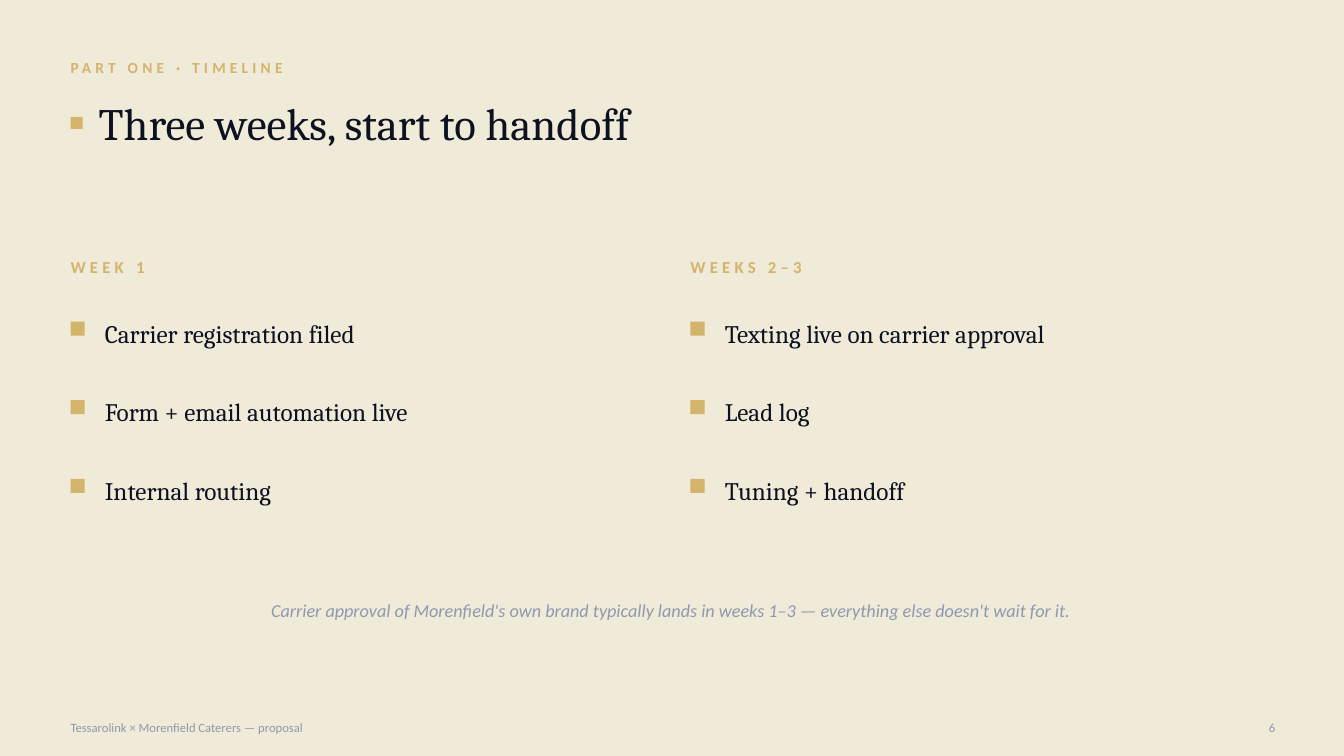
from pptx import Presentation
from pptx.dml.color import RGBColor
from pptx.enum.shapes import MSO_SHAPE
from pptx.enum.text import MSO_ANCHOR, PP_ALIGN
from pptx.util import Pt

RECT = MSO_SHAPE.RECTANGLE
MIDDLE = MSO_ANCHOR.MIDDLE
LEFT, CENTER, RIGHT = PP_ALIGN.LEFT, PP_ALIGN.CENTER, PP_ALIGN.RIGHT

CREAM = RGBColor(0xF0, 0xEA, 0xD9)
GOLD = RGBColor(0xD4, 0xB3, 0x6A)
INK = RGBColor(0x0D, 0x12, 0x20)
GRAY = RGBColor(0x8F, 0x99, 0xAD)

MARGIN = 50.4
WIDTH = 856.8
COLUMN = 399.6
INDENT = 24.48
PITCH = 56.16

WEEKS = [
    (MARGIN, "WEEK 1", ["Carrier registration filed",
                        "Form + email automation live",
                        "Internal routing"]),
    (493.2, "WEEKS 2–3", ["Texting live on carrier approval",
                          "Lead log",
                          "Tuning + handoff"]),
]


class Page:
    serif = "Cambria"
    sans = "Calibri"

    def __init__(self, slide):
        self.slide = slide
        fill = slide.background.fill
        fill.solid()
        fill.fore_color.rgb = CREAM

    def text(self, words, x, y, w, h, size, color, face=sans,
             align=LEFT, bold=False, italic=False):
        box = self.slide.shapes.add_textbox(Pt(x), Pt(y), Pt(w), Pt(h))
        frame = box.text_frame
        frame.word_wrap = True
        frame.vertical_anchor = MIDDLE
        frame.margin_left = frame.margin_right = 0
        frame.margin_top = frame.margin_bottom = 0
        line = frame.paragraphs[0]
        line.text = words
        line.alignment = align
        font = line.font
        font.name = face
        font.size = Pt(size)
        font.bold = bold
        font.italic = italic
        font.color.rgb = color
        return line

    def label(self, words, x, y, w, size):
        line = self.text(words, x, y, w, 21.6, size, GOLD, bold=True)
        line.runs[0]._r.get_or_add_rPr().set("spc", "300")

    def square(self, x, y, side):
        mark = self.slide.shapes.add_shape(RECT, Pt(x), Pt(y), Pt(side), Pt(side))
        mark.shadow.inherit = False
        mark.fill.solid()
        mark.fill.fore_color.rgb = GOLD
        mark.line.fill.background()

    def title(self, words):
        self.square(MARGIN, 83.52, 8.64)
        self.text(words, 70.56, 62.64, 835.2, 50.4, 32, INK, self.serif)

    def item(self, words, x, y):
        self.square(x, y + 7.92, 10.08)
        self.text(words, x + INDENT, y, COLUMN - INDENT, 32.4, 18, INK, self.serif)

    def column(self, x, head, items):
        self.label(head, x, 180, COLUMN, 12)
        for row, words in enumerate(items):
            self.item(words, x, 221.76 + row * PITCH)

    def footer(self, words, number):
        self.text(words, MARGIN, 509.76, 468, 20.16, 9, GRAY)
        self.text(number, 878.4, 509.76, 32.4, 20.16, 9, GRAY, align=RIGHT)


def main():
    deck = Presentation()
    deck.slide_width, deck.slide_height = Pt(960), Pt(540)
    page = Page(deck.slides.add_slide(deck.slide_layouts[6]))
    page.label("PART ONE · TIMELINE", MARGIN, 37.44, WIDTH, 11)
    page.title("Three weeks, start to handoff")
    for x, head, items in WEEKS:
        page.column(x, head, items)
    page.text("Carrier approval of Morenfield's own brand typically lands in "
              "weeks 1–3 — everything else doesn't wait for it.",
              MARGIN, 421.2, WIDTH, 28.8, 13, GRAY, align=CENTER, italic=True)
    page.footer("Tessarolink × Morenfield Caterers — proposal", "6")
    deck.save("out.pptx")


if __name__ == "__main__":
    main()
